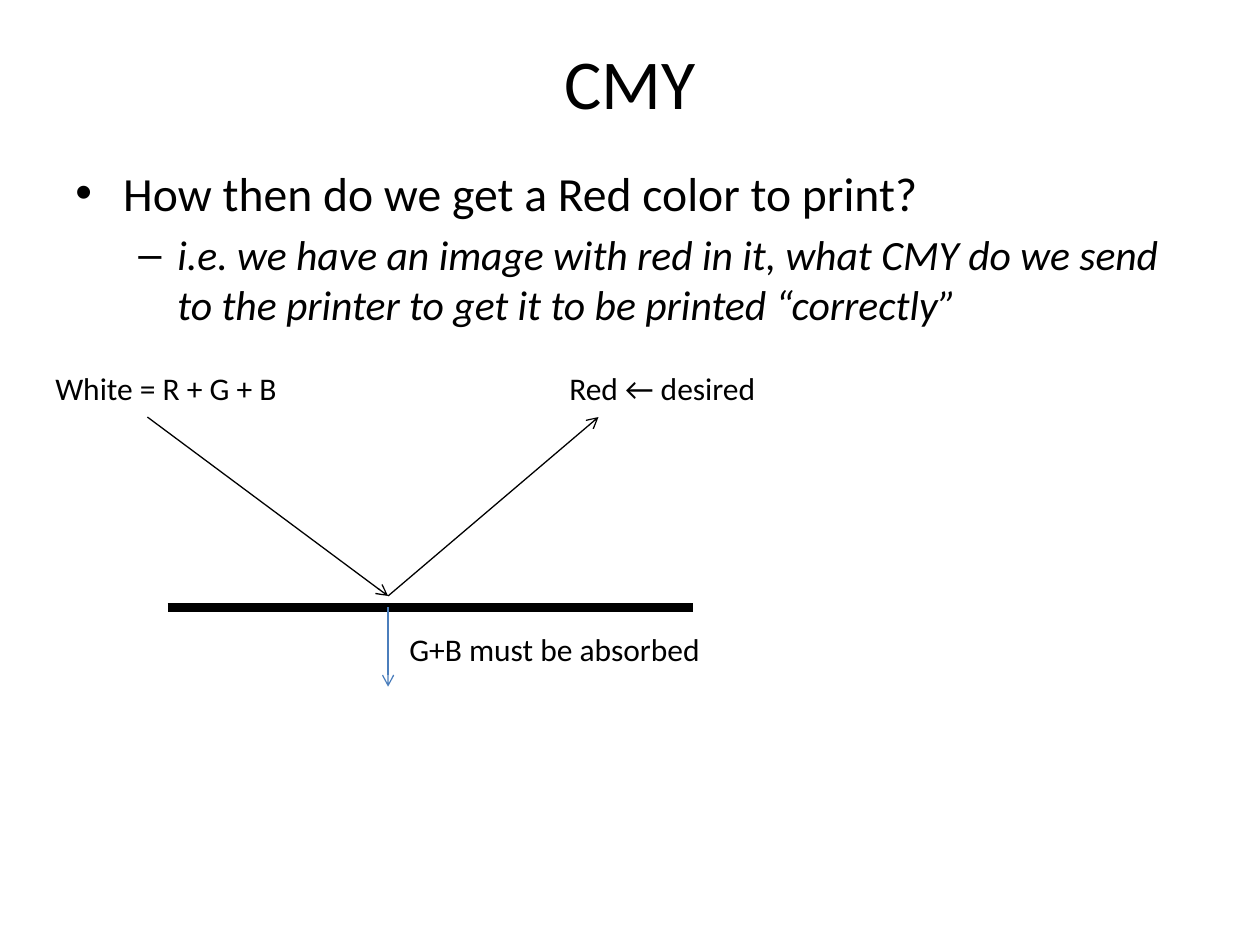
from lxml import etree
from pptx import Presentation
from pptx import util as u
from pptx.dml.color import RGBColor
from pptx.enum import shapes, text
from pptx.oxml.ns import qn


def tint(code):
    return RGBColor.from_string(code)


class Deck:
    font = "Calibri"
    ink = "000000"
    blue = "4B7EBC"

    def __init__(self, wide, high):
        self.file = Presentation()
        self.file.slide_width = u.Inches(wide)
        self.file.slide_height = u.Inches(high)
        self.page = self.file.slides.add_slide(self.file.slide_layouts[6])

    def box(self, left, top, wide, high, wrap=True):
        box = self.page.shapes.add_textbox(*map(u.Inches, (left, top, wide, high)))
        frame = box.text_frame
        frame.word_wrap = wrap
        return frame

    def style(self, para, words, size, slant=False):
        para.text = words
        para.font.name = self.font
        para.font.size = u.Pt(size)
        para.font.italic = slant
        para.font.color.rgb = tint(self.ink)

    def title(self, words, *area):
        frame = self.box(*area)
        frame.vertical_anchor = text.MSO_ANCHOR.MIDDLE
        para = frame.paragraphs[0]
        self.style(para, words, 40)
        para.alignment = text.PP_ALIGN.CENTER

    def list(self, items, *area):
        frame = self.box(*area)
        for rank, (words, size, mark, left, hang, slant) in enumerate(items):
            para = frame.add_paragraph() if rank else frame.paragraphs[0]
            self.style(para, words, size, slant)
            para.level = rank
            para.space_before = u.Pt(round(size * 0.2, 1))
            prop = para._p.get_or_add_pPr()
            prop.set("marL", str(u.Inches(left)))
            prop.set("indent", str(-u.Inches(hang)))
            face = etree.Element(qn("a:buFont"), typeface="Arial")
            sign = etree.Element(qn("a:buChar"), char=mark)
            tail = prop.find(qn("a:defRPr"))
            for part in (face, sign):
                if tail is None:
                    prop.append(part)
                else:
                    tail.addprevious(part)

    def label(self, words, left, top, wide):
        frame = self.box(left, top, wide, 0.4, wrap=False)
        frame.auto_size = text.MSO_AUTO_SIZE.SHAPE_TO_FIT_TEXT
        self.style(frame.paragraphs[0], words, 18)

    def line(self, start, end, color=ink, width=0.75, arrow=True):
        line = self.page.shapes.add_connector(
            shapes.MSO_CONNECTOR.STRAIGHT, *map(u.Inches, start + end))
        line.line.color.rgb = tint(color)
        line.line.width = u.Pt(width)
        if arrow:
            etree.SubElement(line.line._get_or_add_ln(), qn("a:tailEnd"), type="arrow")
        etree.SubElement(line._element.spPr, qn("a:effectLst"))

    def save(self):
        self.file.save("out.pptx")


def main():
    deck = Deck(10, 7.5)
    deck.title("CMY", 0.5, 0.3, 9, 0.7)
    deck.list([
        ("How then do we get a Red color to print?", 27.2, "•", 0.38, 0.38, False),
        ("i.e. we have an image with red in it, what CMY do we send "
         "to the printer to get it to be printed “correctly”",
         23.8, "–", 0.81, 0.31, True),
    ], 0.5, 1.25, 9, 1.25)

    mid, high, hit, base = 3.08, 3.31, 4.73, 4.82
    deck.label("White = R + G + B", 0.34, 2.88, 1.98)
    deck.line((1.33, base), (5.5, base), width=5, arrow=False)
    deck.line((1.17, high), (mid, hit))
    deck.line((mid, hit), (4.75, high))
    deck.label("Red ← desired", 4.42, 2.88, 1.72)
    deck.line((mid, base), (mid, 5.45), deck.blue)
    deck.label("G+B must be absorbed", 3.15, 4.95, 2.54)
    deck.save()


if __name__ == "__main__":
    main()
